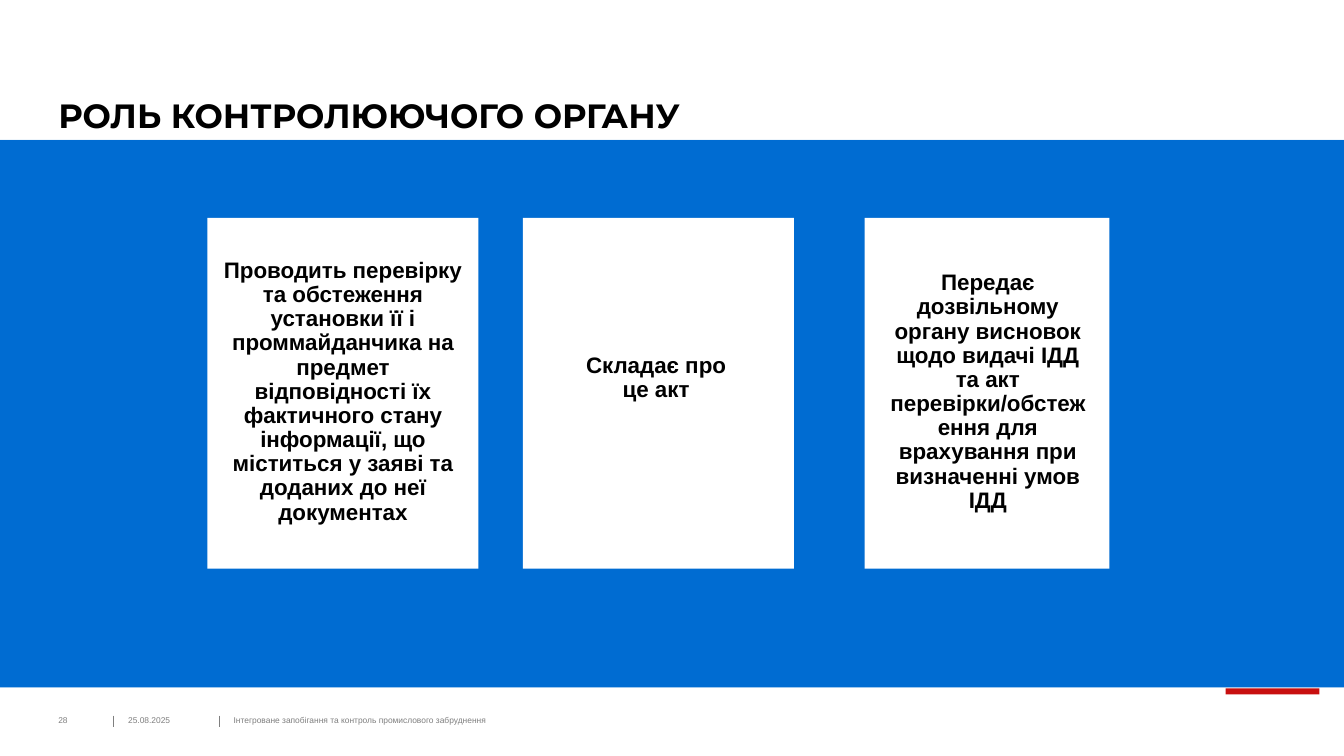
from lxml import etree
from pptx import Presentation
from pptx.dml.color import RGBColor
from pptx.enum.shapes import MSO_CONNECTOR, MSO_SHAPE
from pptx.enum.text import MSO_ANCHOR, PP_ALIGN
from pptx.oxml.ns import qn
from pptx.util import Cm, Pt

STRAIGHT, RECTANGLE = MSO_CONNECTOR.STRAIGHT, MSO_SHAPE.RECTANGLE
TOP, MIDDLE, BOTTOM = MSO_ANCHOR.TOP, MSO_ANCHOR.MIDDLE, MSO_ANCHOR.BOTTOM
LEFT, CENTER = PP_ALIGN.LEFT, PP_ALIGN.CENTER

COLORS = {"white": "FFFFFF", "black": "000000", "gray": "7F7F7F",
          "blue": "006CD2", "pale": "E5F0FA", "red": "C80F0F"}

# Boxes are left, top, width, height in centimetres.
SLIDE_WIDTH, SLIDE_HEIGHT = 33.87, 19.05
TITLE = "РОЛЬ КОНТРОЛЮЮЧОГО ОРГАНУ"
TITLE_BOX = (1.47, 1.02, 20.4, 2.39)
BANDS = [("red", (30.89, 17.35, 2.36, 0.15)),
         ("pale", (0, 3.51, SLIDE_WIDTH, 13.81)),
         ("blue", (0, 3.53, SLIDE_WIDTH, 13.79))]

CARD_TOP, CARD_HEIGHT = 5.49, 8.84
# Card left, card width, text box, text
CARDS = [
    (5.23, 6.83, (5.23, 6.4, 6.83, 7.04),
     "Проводить перевірку та обстеження установки її і проммайданчика на "
     "предмет відповідності їх фактичного стану інформації, що міститься "
     "у заяві та доданих до неї документах"),
    (13.18, 6.83, (14.35, 8.79, 4.37, 1.5), "Складає про це акт"),
    (21.79, 6.17, (22.15, 6.71, 5.49, 6.4),
     "Передає дозвільному органу висновок щодо видачі ІДД та акт "
     "перевірки/обстеження для врахування при визначенні умов ІДД"),
]

FOOTER_TOP, FOOTER_HEIGHT, DIVIDER_HEIGHT = 18.03, 0.25, 0.28
DIVIDER_GAP = 0.36
# Left, width, text
FOOTER = [(1.47, 1.3, "28"), (3.23, 2.01, "25.08.2025"),
          (5.89, 19, "Інтегроване запобігання та контроль промислового забруднення")]

TITLE_STYLE = {"font": {"name": "Montserrat", "size": Pt(24), "bold": True},
               "color": "black", "anchor": BOTTOM, "align": LEFT,
               "spacing": 0.9, "insets": (0, 0)}
CARD_STYLE = {"font": {"name": "Arial", "size": Pt(16), "bold": True},
              "color": "black", "anchor": TOP, "align": CENTER,
              "spacing": 0.9, "insets": (0.25, 0.13)}
FOOTER_STYLE = {"font": {"name": "Arial", "size": Pt(6), "bold": False},
                "color": "gray", "anchor": MIDDLE, "align": LEFT,
                "spacing": 1.0, "insets": (0, 0)}


def rgb(name):
    return RGBColor.from_string(COLORS[name])


def lengths(values):
    return [Cm(value) for value in values]


def add_rectangle(slide, box, color):
    shape = slide.shapes.add_shape(RECTANGLE, *lengths(box))
    shape.shadow.inherit = False
    shape.fill.solid()
    shape.fill.fore_color.rgb = rgb(color)
    shape.line.fill.background()


def add_text(slide, box, text, style):
    frame = slide.shapes.add_textbox(*lengths(box)).text_frame
    horizontal, vertical = lengths(style["insets"])
    frame_format = {"word_wrap": True, "vertical_anchor": style["anchor"],
                    "margin_left": horizontal, "margin_right": horizontal,
                    "margin_top": vertical, "margin_bottom": vertical}
    for name, value in frame_format.items():
        setattr(frame, name, value)
    paragraph = frame.paragraphs[0]
    paragraph.alignment = style["align"]
    paragraph.line_spacing = style["spacing"]
    run = paragraph.add_run()
    run.text = text
    for name, value in style["font"].items():
        setattr(run.font, name, value)
    run.font.color.rgb = rgb(style["color"])


def add_divider(slide, left):
    ends = lengths((left, FOOTER_TOP, left, FOOTER_TOP + DIVIDER_HEIGHT))
    connector = slide.shapes.add_connector(STRAIGHT, *ends)
    connector.line.color.rgb = rgb("gray")
    connector.line.width = Pt(0.75)
    etree.SubElement(connector._element.spPr, qn("a:effectLst"))


def main():
    presentation = Presentation()
    presentation.slide_width = Cm(SLIDE_WIDTH)
    presentation.slide_height = Cm(SLIDE_HEIGHT)
    slide = presentation.slides.add_slide(presentation.slide_layouts[6])
    slide.background.fill.solid()
    slide.background.fill.fore_color.rgb = rgb("white")

    for color, box in BANDS:
        add_rectangle(slide, box, color)
    add_text(slide, TITLE_BOX, TITLE, TITLE_STYLE)

    for left, width, text_box, text in CARDS:
        add_rectangle(slide, (left, CARD_TOP, width, CARD_HEIGHT), "white")
        add_text(slide, text_box, text, CARD_STYLE)

    for index, (left, width, text) in enumerate(FOOTER):
        if index:
            add_divider(slide, left - DIVIDER_GAP)
        add_text(slide, (left, FOOTER_TOP, width, FOOTER_HEIGHT), text, FOOTER_STYLE)

    presentation.save("out.pptx")


if __name__ == "__main__":
    main()
